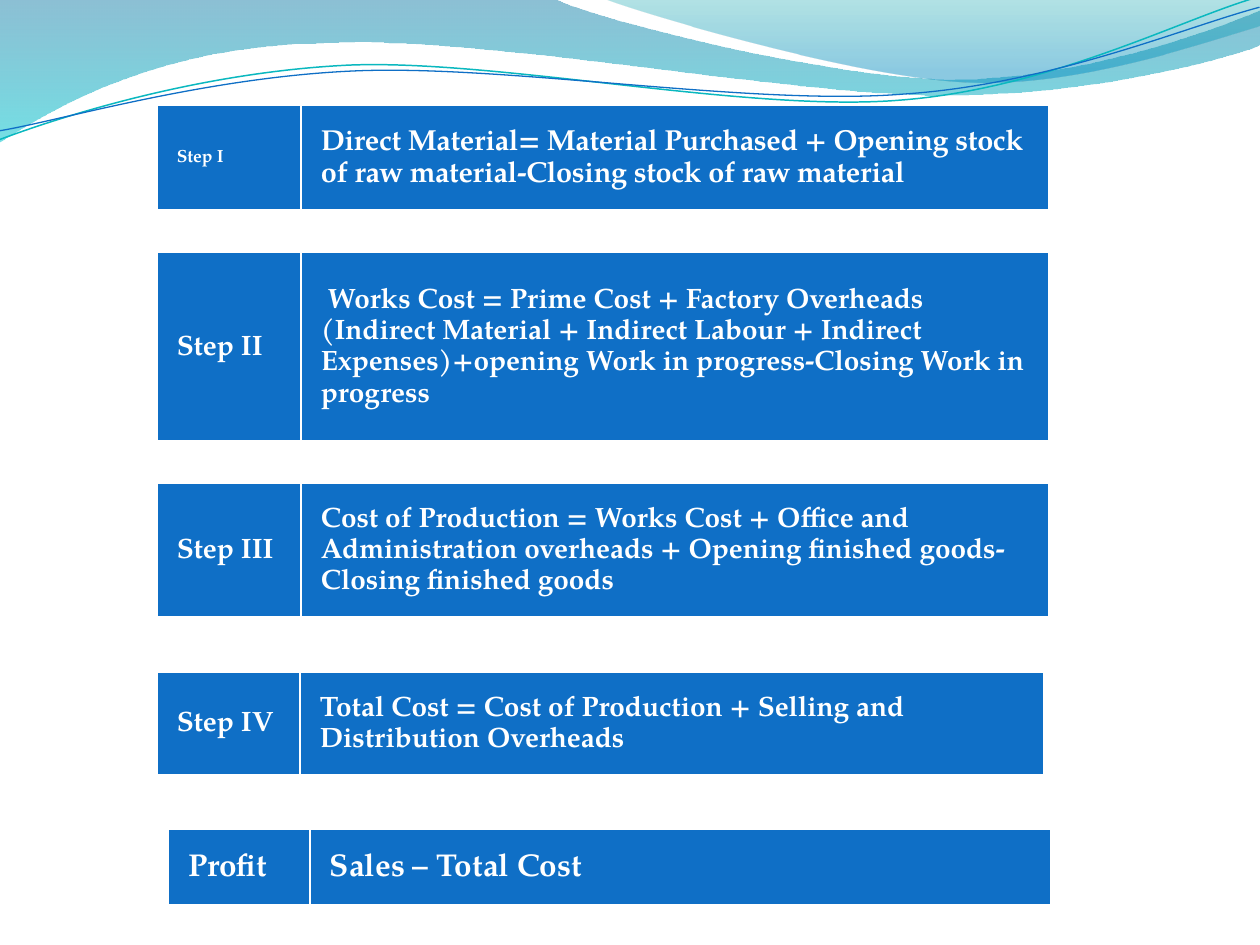
"""Builds a slide of cost steps, one table each, under a wave header."""
from lxml import etree
from pptx import Presentation
from pptx import util as u
from pptx.dml.color import RGBColor
from pptx.enum import text
from pptx.oxml import ns

PX = 914400 / 126
FONT = "TeX Gyre Pagella"
HUES = {"band": "0F6FC6", "white": "FFFFFF", "teal": "0AB8BF", "navy": "0074A1",
        "aqua": "00C6CF", "sea": "00A1A9", "sky": "008BBF"}


def emu(px):
    return u.Emu(round(px * PX))


def hue(name):
    return RGBColor.from_string(HUES[name])


def bend(form, parts):
    """Turns each part of three points into one Bezier curve."""
    lines = list(form._element.spPr.iter(ns.qn("a:lnTo")))
    for part in parts:
        group, lines = lines[:len(part) // 2], lines[len(part) // 2:]
        if len(group) == 3:
            curve = etree.Element(ns.qn("a:cubicBezTo"))
            group[0].addprevious(curve)
            for line in group:
                curve.append(line[0])
                line.getparent().remove(line)


class Deck:
    def __init__(self):
        self.prs = Presentation()
        self.prs.slide_width, self.prs.slide_height = emu(1260), emu(945)
        self.slide = self.prs.slides.add_slide(self.prs.slide_layouts[6])

    def shape(self, start, parts, closed):
        pts = [(emu(x), emu(y)) for part in parts for x, y in zip(part[::2], part[1::2])]
        pen = self.slide.shapes.build_freeform(emu(start[0]), emu(start[1]), scale=1.0)
        pen.add_line_segments(pts, close=closed)
        form = pen.convert_to_shape()
        bend(form, parts)
        form.shadow.inherit = False
        return form

    def wave(self, start, parts, stops):
        form = self.shape(start, parts, True)
        form.line.fill.background()
        form.fill.gradient()
        form.fill.gradient_angle = 270
        for stop, (pos, name, alpha) in zip(form.fill.gradient_stops, stops):
            stop.position = pos
            stop.color.rgb = hue(name)
        clrs = form._element.spPr.iter(ns.qn("a:srgbClr"))
        for clr, (pos, name, alpha) in zip(clrs, stops):
            etree.SubElement(clr, ns.qn("a:alpha"), val=str(alpha * 1000))

    def curve(self, start, parts, name, width):
        form = self.shape(start, parts, False)
        form.rotation = 357.3
        form.fill.background()
        form.line.color.rgb = hue(name)
        form.line.width = u.Pt(width)

    def cell(self, cell, words, size, after, tight=0):
        cell.vertical_anchor = text.MSO_ANCHOR.MIDDLE
        cell.margin_left = cell.margin_right = emu(20)
        cell.margin_top = cell.margin_bottom = emu(20)
        cell.fill.solid()
        cell.fill.fore_color.rgb = hue("band")
        para = cell.text_frame.paragraphs[0]
        para.line_spacing, para.space_after = 1.15, u.Pt(after)
        run = para.add_run()
        run.text = words
        font = run.font
        font.name, font.size, font.bold = FONT, u.Pt(size), True
        font.color.rgb = hue("white")
        if tight:
            run._r.get_or_add_rPr().set("spc", str(tight))

    def step(self, box, cols, row, label, rule, sizes, after=10, tight=0):
        x, y, high = box
        frame = self.slide.shapes.add_table(1, 2, emu(x), emu(y), emu(sum(cols)), emu(high))
        table = frame.table
        for col, wide in zip(table.columns, cols):
            col.width = emu(wide)
        table.rows[0].height = emu(row)
        frame.height = emu(high)
        self.cell(table.cell(0, 0), label, sizes[0], after)
        self.cell(table.cell(0, 1), rule, sizes[1], after, tight)


def main():
    deck = Deck()
    deck.wave((0, 0), [(554, -1), (600, 21, 837, 79, 955, 79),
                       (1075, 79, 1207, 33, 1260, 11), (1261, 45),
                       (1239, 55, 1096, 96, 940, 95), (784, 95, 481, 35, 324, 43),
                       (163, 45, 58, 105, -1, 142)],
              [(0, "navy", 45), (1, "aqua", 55)])
    deck.wave((604, -1), [(641, 14, 859, 78, 969, 82),
                          (1079, 87, 1211, 40, 1260, 26), (1260, 0)],
              [(0, "sea", 30), (0.8, "sky", 45)])
    deck.curve((-3, 110), [(59, 90, 200, 52, 350, 52), (498, 53, 745, 118, 897, 113),
                           (1048, 109, 1184, 45, 1260, 27)], "teal", 0.85)
    deck.curve((-2, 101), [(58, 94, 207, 57, 357, 58), (508, 59, 751, 112, 902, 107),
                           (1052, 104, 1187, 53, 1262, 37)], "band", 0.75)

    wide = (144, 748)
    deck.step((157, 105, 118), wide, 0, "Step I",
              "Direct Material= Material Purchased + Opening stock of raw material-Closing "
              "stock of raw material", (10, 16.5), after=22.5, tight=-15)
    deck.step((157, 252, 194), wide, 189, "Step II",
              " Works Cost = Prime Cost + Factory Overheads (Indirect Material + Indirect "
              "Labour + Indirect Expenses)+opening Work in progress-Closing Work in progress",
              (16, 16))
    deck.step((157, 483, 155), wide, 105, "Step III",
              "Cost of Production = Works Cost + Office and Administration overheads + "
              "Opening finished goods-Closing finished goods", (16, 16))
    deck.step((157, 672, 117), (143, 744), 0, "Step IV",
              "Total Cost = Cost of Production + Selling and Distribution Overheads", (16, 16))
    deck.step((168, 829, 83), (142, 741), 0, "Profit", "Sales – Total Cost", (18, 18))
    deck.prs.save("out.pptx")


if __name__ == "__main__":
    main()
